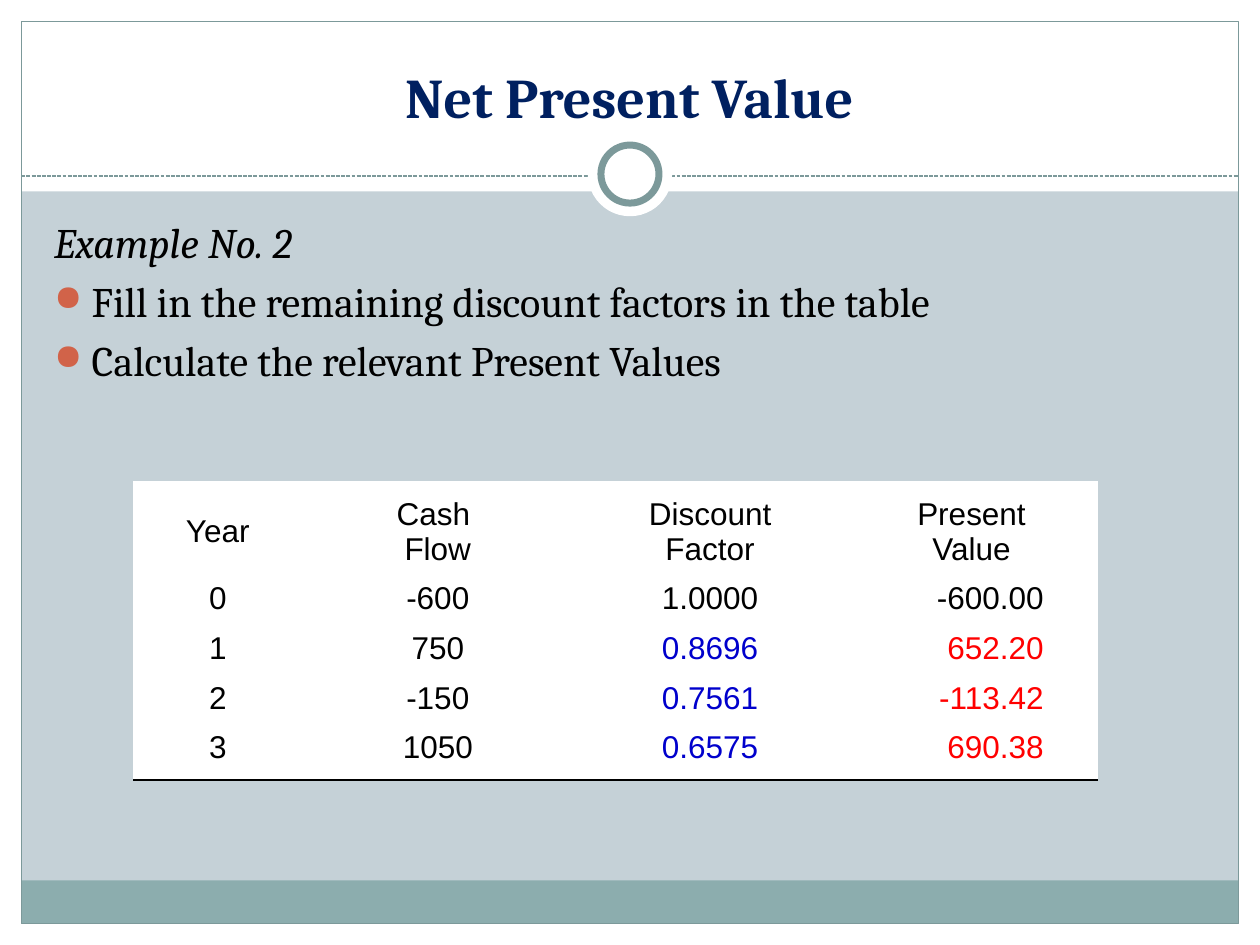
from dataclasses import dataclass

from lxml.etree import SubElement
from pptx import Presentation
from pptx.dml.color import RGBColor
from pptx.enum.dml import MSO_LINE
from pptx.enum.shapes import MSO_CONNECTOR, MSO_SHAPE
from pptx.enum.text import MSO_ANCHOR, PP_ALIGN
from pptx.oxml.ns import qn
from pptx.util import Cm, Pt


@dataclass(frozen=True)
class Theme:
    backdrop: str = "C5D1D7"
    white: str = "FFFFFF"
    footer: str = "8CADAE"
    rule: str = "7C999A"
    title: str = "002060"
    text: str = "000000"
    bullet: str = "D16349"
    factor: str = "0000CC"
    value: str = "FF0000"
    serif: str = "Cambria"
    sans: str = "Arial"
    title_size: int = 32
    body_size: int = 24
    table_size: int = 18


theme = Theme()


def write(frame, lines, font=theme.serif, size=theme.body_size, color=theme.text,
          bold=False, align=PP_ALIGN.LEFT):
    """Fill a text frame, one paragraph for each line."""
    frame.word_wrap = True
    for number, line in enumerate(lines):
        paragraph = frame.add_paragraph() if number else frame.paragraphs[0]
        paragraph.alignment = align
        run = paragraph.add_run()
        run.text = line
        run.font.name = font
        run.font.size = Pt(size)
        run.font.bold = bold
        run.font.color.rgb = RGBColor.from_string(color)


def add_panel(left, top, width, height, kind=MSO_SHAPE.RECTANGLE, fill=None, line_width=0):
    """Draw a plain shape, measured in centimetres."""
    panel = slide.shapes.add_shape(kind, Cm(left), Cm(top), Cm(width), Cm(height))
    panel.shadow.inherit = False
    if fill:
        panel.fill.solid()
        panel.fill.fore_color.rgb = RGBColor.from_string(fill)
    else:
        panel.fill.background()
    if line_width:
        panel.line.width = Pt(line_width)
        panel.line.color.rgb = RGBColor.from_string(theme.rule)
    else:
        panel.line.fill.background()


presentation = Presentation()
presentation.slide_width = Cm(25.4)
presentation.slide_height = Cm(19.05)
slide = presentation.slides.add_slide(presentation.slide_layouts[6])
slide.background.fill.solid()
slide.background.fill.fore_color.rgb = RGBColor.from_string(theme.backdrop)

# White margins, footer band and outline
margin = 0.43
for box in [
    (0, 19.05 - margin, 25.4, margin),
    (0, 0, 25.4, 3.86),
    (0, 0, margin, 19.05),
    (25.4 - margin, 0, margin, 19.05),
]:
    add_panel(*box, fill=theme.white)
add_panel(margin, 17.75, 25.4 - 2 * margin, 0.87, fill=theme.footer)
add_panel(margin, margin, 25.4 - 2 * margin, 19.05 - 2 * margin, line_width=0.75)

# Dashed rule with the ring on it
rule = slide.shapes.add_connector(
    MSO_CONNECTOR.STRAIGHT, Cm(margin), Cm(3.55), Cm(25.4 - margin), Cm(3.55))
rule.line.width = Pt(0.75)
rule.line.color.rgb = RGBColor.from_string(theme.rule)
rule.line.dash_style = MSO_LINE.SQUARE_DOT
SubElement(rule.element.spPr, qn("a:effectLst"))
for diameter, line_width in [(1.7, 0), (1.17, 4)]:
    add_panel(12.7 - diameter / 2, 3.51 - diameter / 2, diameter, diameter,
              MSO_SHAPE.OVAL, theme.white, line_width)

# Title
title = slide.shapes.add_textbox(Cm(0.84), Cm(0.64), Cm(23.7), Cm(2.11)).text_frame
title.vertical_anchor = MSO_ANCHOR.BOTTOM
write(title, ["Net Present Value"], size=theme.title_size, color=theme.title,
      bold=True, align=PP_ALIGN.CENTER)

# Task
task = slide.shapes.add_textbox(Cm(0.84), Cm(4.24), Cm(23.27), Cm(12.7)).text_frame
write(task, [
    "Example No. 2",
    "Fill in the remaining discount factors in the table",
    "Calculate the relevant Present Values",
])
task.paragraphs[0].runs[0].font.italic = True
for number, paragraph in enumerate(task.paragraphs):
    properties = paragraph._p.get_or_add_pPr()
    SubElement(SubElement(properties, qn("a:spcBef")), qn("a:spcPct"), val="20000")
    if number:
        properties.set("marL", str(Cm(0.76)))
        properties.set("indent", str(-Cm(0.76)))
        SubElement(SubElement(properties, qn("a:buClr")), qn("a:srgbClr"), val=theme.bullet)
        SubElement(properties, qn("a:buSzPct"), val="85000")
        SubElement(properties, qn("a:buChar"), char="●")

# Discounting table
cash_flows = [
    (["Year"], ["Cash ", "Flow"], ["Discount", "Factor"], ["Present", "Value"]),
    (["0"], ["-600"], ["1.0000"], ["-600.00"]),
    (["1"], ["750"], ["0.8696"], ["652.20"]),
    (["2"], ["-150"], ["0.7561"], ["-113.42"]),
    (["3"], ["1050"], ["0.6575"], ["690.38"]),
]
table = slide.shapes.add_table(
    5, 4, Cm(2.7), Cm(9.72), Cm(19.4), Cm(6)).table
table.first_row = table.horz_banding = False
for column, width in zip(table.columns, [3.38, 5.49, 5.49, 5.05]):
    column.width = Cm(width)
answer_colors = {2: theme.factor, 3: theme.value}
for row_number, entries in enumerate(cash_flows):
    table.rows[row_number].height = Cm(1 if row_number else 2)
    for column_number, lines in enumerate(entries):
        cell = table.cell(row_number, column_number)
        is_amount = row_number > 0 and column_number == 3
        cell.margin_top = cell.margin_bottom = 0
        cell.margin_left = Cm(0.2)
        cell.margin_right = Cm(1.07 if is_amount else 0.2)
        cell.vertical_anchor = MSO_ANCHOR.TOP if row_number else MSO_ANCHOR.MIDDLE
        write(cell.text_frame, lines, font=theme.sans, size=theme.table_size,
              color=answer_colors.get(column_number, theme.text) if row_number > 1 else theme.text,
              align=PP_ALIGN.RIGHT if is_amount else PP_ALIGN.CENTER)
        border = SubElement(cell._tc.get_or_add_tcPr(), qn("a:lnB"), w=str(Pt(1)))
        SubElement(SubElement(border, qn("a:solidFill")), qn("a:srgbClr"), val=theme.text)
        cell.fill.solid()
        cell.fill.fore_color.rgb = RGBColor.from_string(theme.white)

presentation.save("out.pptx")
